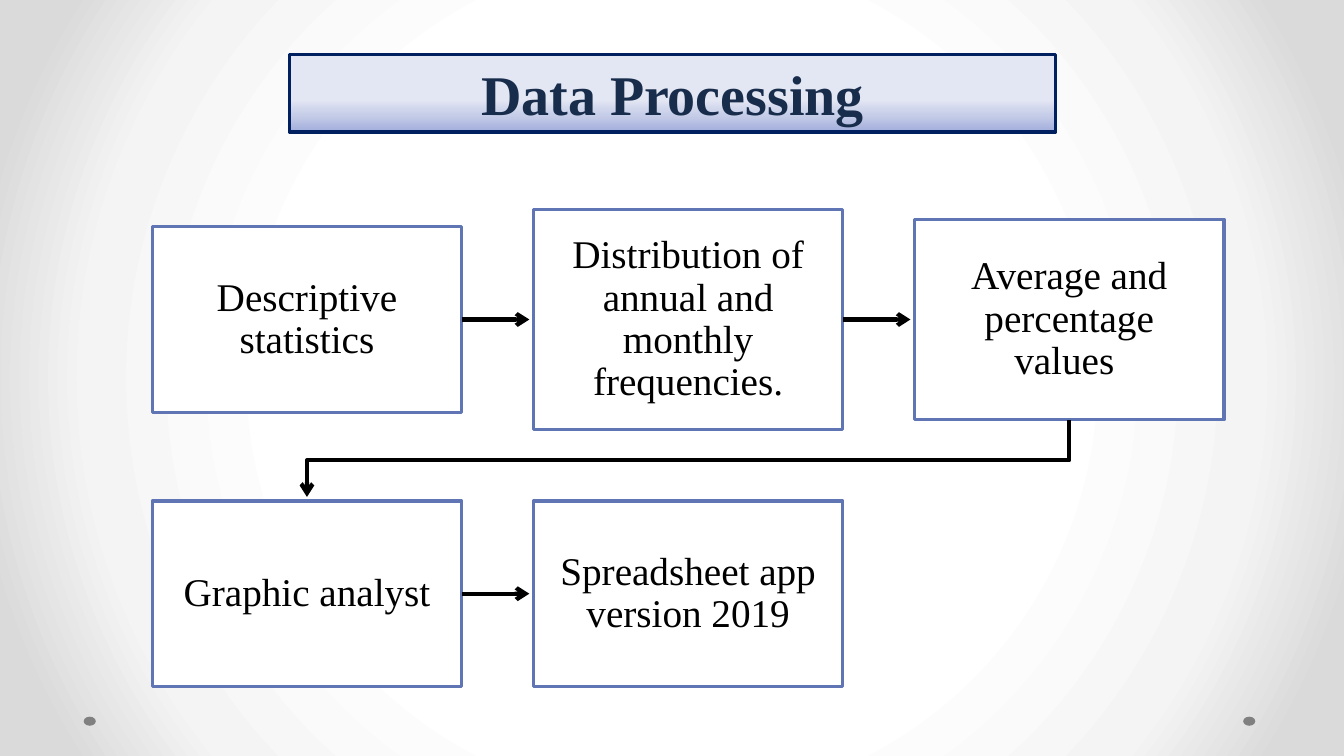
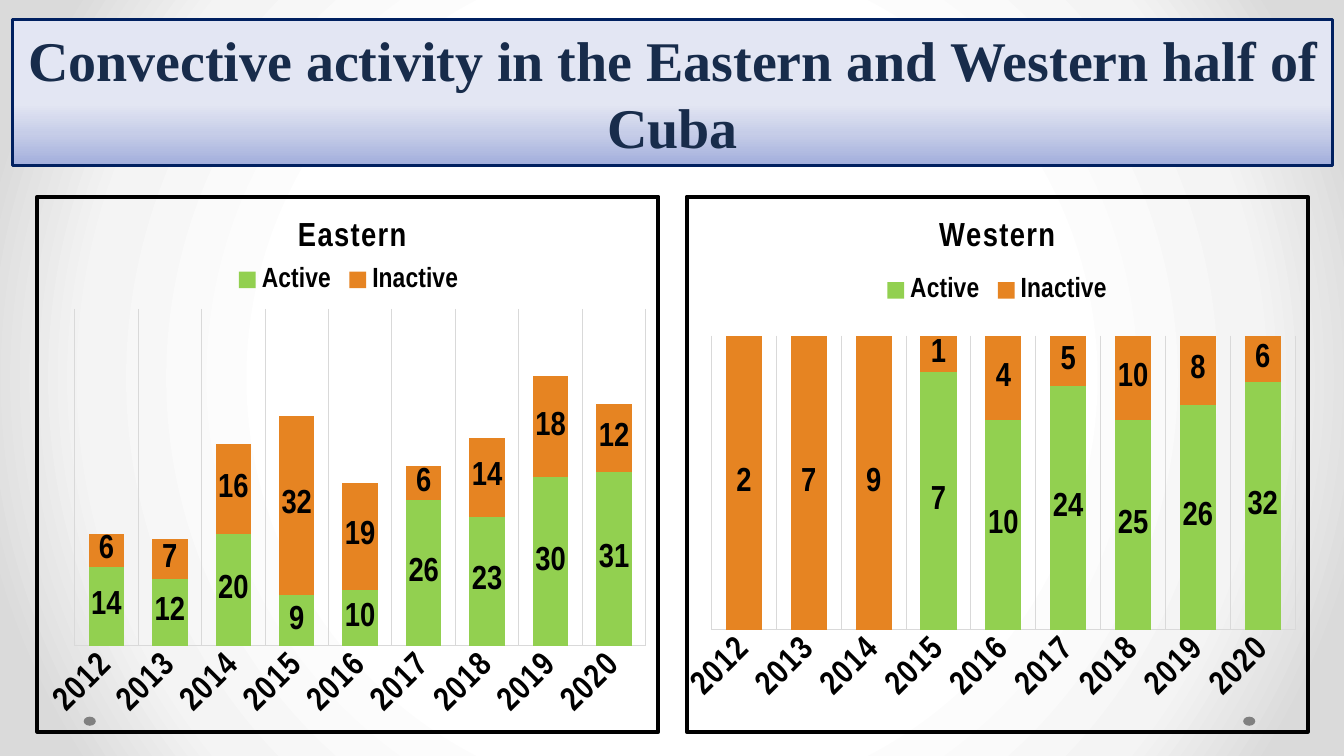
from lxml import etree
from pptx import Presentation
from pptx.chart.data import CategoryChartData
from pptx.dml.color import RGBColor
from pptx.enum.chart import XL_CHART_TYPE, XL_LEGEND_POSITION, XL_TICK_MARK
from pptx.enum.shapes import MSO_CONNECTOR, MSO_SHAPE
from pptx.enum.text import MSO_ANCHOR, MSO_AUTO_SIZE, PP_ALIGN
from pptx.oxml import parse_xml
from pptx.oxml.ns import nsdecls, qn
from pptx.util import Inches, Pt

RECTANGLE, OVAL = MSO_SHAPE.RECTANGLE, MSO_SHAPE.OVAL
STRAIGHT = MSO_CONNECTOR.STRAIGHT
CENTER, MIDDLE = PP_ALIGN.CENTER, MSO_ANCHOR.MIDDLE
FIXED_SIZE = MSO_AUTO_SIZE.NONE
STACKED = XL_CHART_TYPE.COLUMN_STACKED
STACKED_100 = XL_CHART_TYPE.COLUMN_STACKED_100
LEGEND_TOP, NO_TICKS = XL_LEGEND_POSITION.TOP, XL_TICK_MARK.NONE

BLACK = RGBColor(0x00, 0x00, 0x00)
WHITE = RGBColor(0xFF, 0xFF, 0xFF)
GRAY = RGBColor(0x80, 0x80, 0x80)
GRID_GRAY = RGBColor(0xD9, 0xD9, 0xD9)
BOX_BLUE = RGBColor(0x60, 0x76, 0xB4)
NAVY = RGBColor(0x00, 0x20, 0x60)
TITLE_INK = RGBColor(0x18, 0x2C, 0x4B)
GREEN = RGBColor(0x92, 0xD0, 0x50)
ORANGE = RGBColor(0xE6, 0x84, 0x22)

PAGE_STOPS = [(50, WHITE), (76, RGBColor(0xF4, 0xF4, 0xF4)),
              (92, RGBColor(0xDA, 0xDA, 0xDA))]
TITLE_STOPS = [(0, RGBColor(0xA2, 0xAE, 0xDC)), (22, RGBColor(0xC6, 0xCD, 0xE8)),
               (42, RGBColor(0xE3, 0xE6, 0xF3))]
FROM_CENTER = ('<a:path path="circle"><a:fillToRect l="50000" t="50000" '
               'r="50000" b="50000"/></a:path>')
UPWARD = '<a:lin ang="16200000" scaled="0"/>'

SERIF, NARROW, CHART_FONT = "Times New Roman", "Arial Narrow", "TeX Gyre Pagella"

# Grid of the flow chart, in inches
FLOW_LEFT, FLOW_PITCH, BOX_WIDTH = 1.51, 3.78, 3.07
ROW_CENTERS = (3.17, 5.89)
BOX_INSET, ARROW_GAP = 0.22, 0.04

# Charts side by side, in inches
CHART_LEFT, CHART_PITCH, CHART_TOP = 0.35, 6.44, 1.93
CHART_WIDTH, CHART_HEIGHT = 6.2, 5.35

YEARS = [str(year) for year in range(2012, 2021)]
# Text, column, row, height
STEPS = [
    ("Descriptive statistics", 0, 0, 1.84),
    ("Distribution of annual and monthly frequencies.", 1, 0, 2.19),
    ("Average and percentage values ", 2, 0, 1.99),
    ("Graphic analyst", 0, 1, 1.84),
    ("Spreadsheet app version 2019", 1, 1, 1.84),
]
# Title, type, axis maximum, places of parts as shares, active, inactive
CHARTS = [
    ("Eastern", STACKED, 60,
     {"plotArea": (0.06, 0.21, 0.92, 0.63), "title": (0.41, 0.03),
      "legend": (0.31, 0.12)},
     (14, 12, 20, 9, 10, 26, 23, 30, 31), (6, 7, 16, 32, 19, 6, 14, 18, 12)),
    ("Western", STACKED_100, None, {"plotArea": (0.04, 0.26, 0.94, 0.55)},
     (0, 0, 0, 7, 10, 24, 25, 26, 32), (2, 7, 9, 1, 4, 5, 10, 8, 6)),
]


def set_font(font, size, name, color=BLACK, bold=False):
    font.size, font.name, font.bold = Pt(size), name, bold
    font.color.rgb = color


def add_run(para, text, *style):
    span = para.add_run()
    span.text = text
    set_font(span.font, *style)


def set_line(line, color, width):
    line.color.rgb = color
    line.width = Pt(width)


def set_gradient(fill, holder, stops, direction):
    """Put a gradient in the place of the holder's solid fill."""
    fill.solid()
    fill.fore_color.rgb = WHITE
    stop_xml = "".join(
        f'<a:gs pos="{share * 1000}"><a:srgbClr val="{color}"/></a:gs>'
        for share, color in stops)
    gradient = parse_xml(f'<a:gradFill {nsdecls("a")} rotWithShape="1">'
                         f'<a:gsLst>{stop_xml}</a:gsLst>{direction}</a:gradFill>')
    holder.replace(holder.find(qn("a:solidFill")), gradient)


def add_arrowhead(shape):
    etree.SubElement(shape.get_or_add_ln(), qn("a:tailEnd"), type="arrow")


# Shared parts
def style_master(deck, page):
    master = deck.slide_master
    fill = master.background.fill
    fill.solid()
    holder = master.element.find(".//" + qn("p:bgPr"))
    set_gradient(fill, holder, PAGE_STOPS, FROM_CENTER)
    for number, left in enumerate((0.83, 12.33)):
        dot = page.shapes.add_shape(OVAL, Inches(left), Inches(7.11),
                                    Inches(0.12), Inches(0.09))
        dot.shadow.inherit = False
        dot.fill.solid()
        dot.fill.fore_color.rgb = GRAY
        dot.line.fill.background()
        dot.element.find(".//" + qn("p:cNvPr")).set("id", str(20 + number))
        master.shapes.element.append(dot.element)


def add_title(page, text, left, top, width, height):
    title = page.shapes.title
    title.left, title.top = Inches(left), Inches(top)
    title.width, title.height = Inches(width), Inches(height)
    set_gradient(title.fill, title.element.spPr, TITLE_STOPS, UPWARD)
    set_line(title.line, NAVY, 2.25)
    frame = title.text_frame
    frame.word_wrap, frame.auto_size = True, FIXED_SIZE
    frame.vertical_anchor = MIDDLE
    para = frame.paragraphs[0]
    para.alignment = CENTER
    add_run(para, text, 40, SERIF, TITLE_INK, True)


# Flow chart
def add_step(page, text, column, row, height):
    box = page.shapes.add_shape(
        RECTANGLE, Inches(FLOW_LEFT + column * FLOW_PITCH),
        Inches(ROW_CENTERS[row] - height / 2), Inches(BOX_WIDTH), Inches(height))
    box.shadow.inherit = False
    box.fill.solid()
    box.fill.fore_color.rgb = WHITE
    set_line(box.line, BOX_BLUE, 2.25)
    frame = box.text_frame
    frame.word_wrap, frame.vertical_anchor = True, MIDDLE
    frame.margin_left = frame.margin_right = Inches(BOX_INSET)
    frame.margin_top = frame.margin_bottom = Inches(BOX_INSET)
    para = frame.paragraphs[0]
    para.alignment, para.line_spacing = CENTER, 0.9
    add_run(para, text, 28, SERIF)
    return box


def add_arrow(page, start, end):
    """Lead from a box to just before the next one in its row."""
    middle = start.top + start.height // 2
    arrow = page.shapes.add_connector(
        STRAIGHT, start.left + start.width, middle,
        end.left - Inches(ARROW_GAP), middle)
    arrow.begin_connect(start, 3)
    set_line(arrow.line, BLACK, 3)
    add_arrowhead(arrow)
    etree.SubElement(arrow.element.spPr, qn("a:effectLst"))


def add_return_arrow(page, start, end):
    """Lead from the end of one row to the start of the next."""
    start_x, end_x = (box.left + box.width // 2 for box in (start, end))
    start_y, end_y = start.top + start.height, end.top - Inches(ARROW_GAP)
    turn_y = (start_y + end.top) // 2
    builder = page.shapes.build_freeform(start_x, start_y)
    builder.add_line_segments(
        [(start_x, turn_y), (end_x, turn_y), (end_x, end_y)], close=False)
    arrow = builder.convert_to_shape()
    arrow.shadow.inherit = False
    arrow.fill.background()
    set_line(arrow.line, BLACK, 3)
    add_arrowhead(arrow)


# Charts
def add_border(chart):
    border = parse_xml(
        f'<c:spPr {nsdecls("c", "a")}><a:noFill/><a:ln w="{Pt(3)}"><a:solidFill>'
        f'<a:srgbClr val="{BLACK}"/></a:solidFill></a:ln></c:spPr>')
    chart.element.find(qn("c:chart")).addnext(border)


def place_part(chart, name, shares):
    """Place the title, legend or inner plot area by shares of the chart."""
    part = chart.element.find(f'{qn("c:chart")}/{qn("c:" + name)}')
    for old_layout in part.findall(qn("c:layout")):
        part.remove(old_layout)
    layout = parse_xml(f'<c:layout {nsdecls("c")}><c:manualLayout/></c:layout>')
    settings = [("layoutTarget", "inner")] if name == "plotArea" else []
    settings += [("xMode", "edge"), ("yMode", "edge")]
    settings += zip("xywh", map(str, shares))
    for setting, value in settings:
        etree.SubElement(layout[0], qn("c:" + setting), val=value)
    if name == "plotArea":
        part.insert(0, layout)
    else:
        part.find(qn("c:overlay")).addprevious(layout)


def style_axes(chart, maximum):
    years, values = chart.category_axis, chart.value_axis
    years.major_tick_mark = years.minor_tick_mark = NO_TICKS
    years.has_major_gridlines = True
    set_line(years.format.line, GRID_GRAY, 0.75)
    set_line(years.major_gridlines.format.line, GRID_GRAY, 0.75)
    set_font(years.tick_labels.font, 24, NARROW, BLACK, True)
    # Slanted, slightly spaced year labels
    label_text = chart.element.find(f'.//{qn("c:catAx")}/{qn("c:txPr")}')
    label_text.find(qn("a:bodyPr")).set("rot", "-2700000")
    label_text.find(".//" + qn("a:defRPr")).set("spc", "100")
    values.has_major_gridlines = False
    values.minimum_scale = 0
    if maximum:
        values.maximum_scale = maximum
    values.visible = False


def add_column_chart(page, column, title, kind, maximum, places,
                     active, inactive):
    data = CategoryChartData()
    data.categories = YEARS
    data.add_series("Active", active)
    data.add_series("Inactive", inactive)
    chart = page.shapes.add_chart(
        kind, Inches(CHART_LEFT + column * CHART_PITCH), Inches(CHART_TOP),
        Inches(CHART_WIDTH), Inches(CHART_HEIGHT), data).chart
    set_font(chart.font, 10, CHART_FONT)

    chart.has_title = True
    chart.chart_title.include_in_layout = False
    add_run(chart.chart_title.text_frame.paragraphs[0], title,
            24, NARROW, BLACK, True)
    for properties in chart.chart_title.element.iter(qn("a:rPr")):
        properties.set("spc", "100")
    chart.has_legend = True
    chart.legend.position = LEGEND_TOP
    chart.legend.include_in_layout = False
    set_font(chart.legend.font, 20, NARROW, BLACK, True)

    plot = chart.plots[0]
    plot.gap_width, plot.overlap = 79, 100
    plot.vary_by_categories = False
    for series, color in zip(plot.series, (GREEN, ORANGE)):
        series.format.fill.solid()
        series.format.fill.fore_color.rgb = color
        labels = series.data_labels
        labels.show_value = True
        # This format leaves zeros unlabelled
        labels.number_format, labels.number_format_is_linked = "#", False
        set_font(labels.font, 24, NARROW, BLACK, True)
    style_axes(chart, maximum)
    add_border(chart)
    for name, shares in places.items():
        place_part(chart, name, shares)


def main():
    deck = Presentation()
    deck.slide_width, deck.slide_height = Inches(13.33), Inches(7.5)
    title_only = deck.slide_layouts[5]

    # Data processing steps
    page = deck.slides.add_slide(title_only)
    style_master(deck, page)
    add_title(page, "Data Processing", 2.87, 0.54, 7.6, 0.77)
    boxes = [add_step(page, *step) for step in STEPS]
    for start, end in ((0, 1), (1, 2), (3, 4)):
        add_arrow(page, boxes[start], boxes[end])
    add_return_arrow(page, boxes[2], boxes[3])

    # Convective activity charts
    page = deck.slides.add_slide(title_only)
    add_title(page, "Convective activity in the Eastern and Western half of Cuba",
              0.12, 0.19, 13.1, 1.45)
    for column, content in enumerate(CHARTS):
        add_column_chart(page, column, *content)

    deck.save("out.pptx")


if __name__ == "__main__":
    main()
